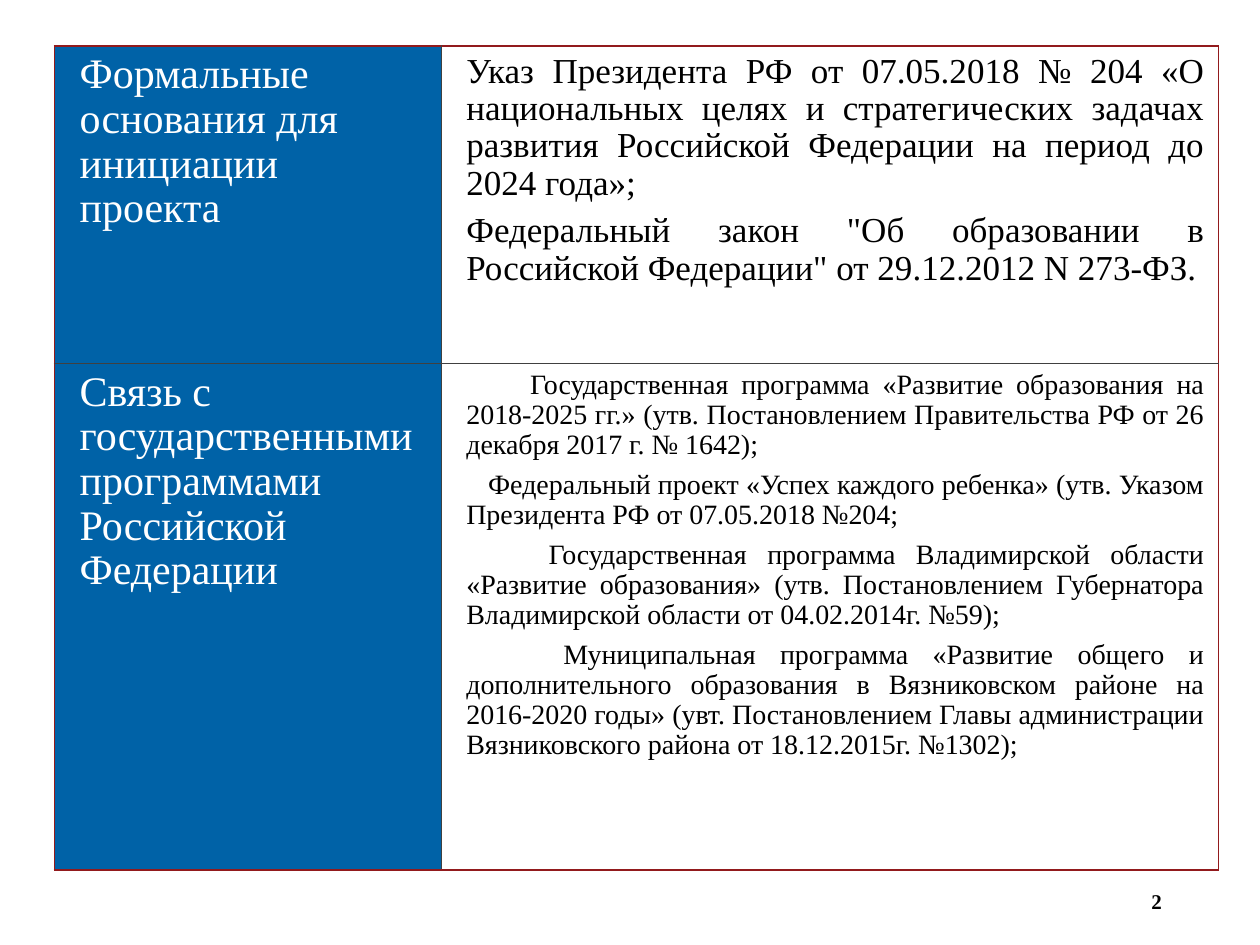
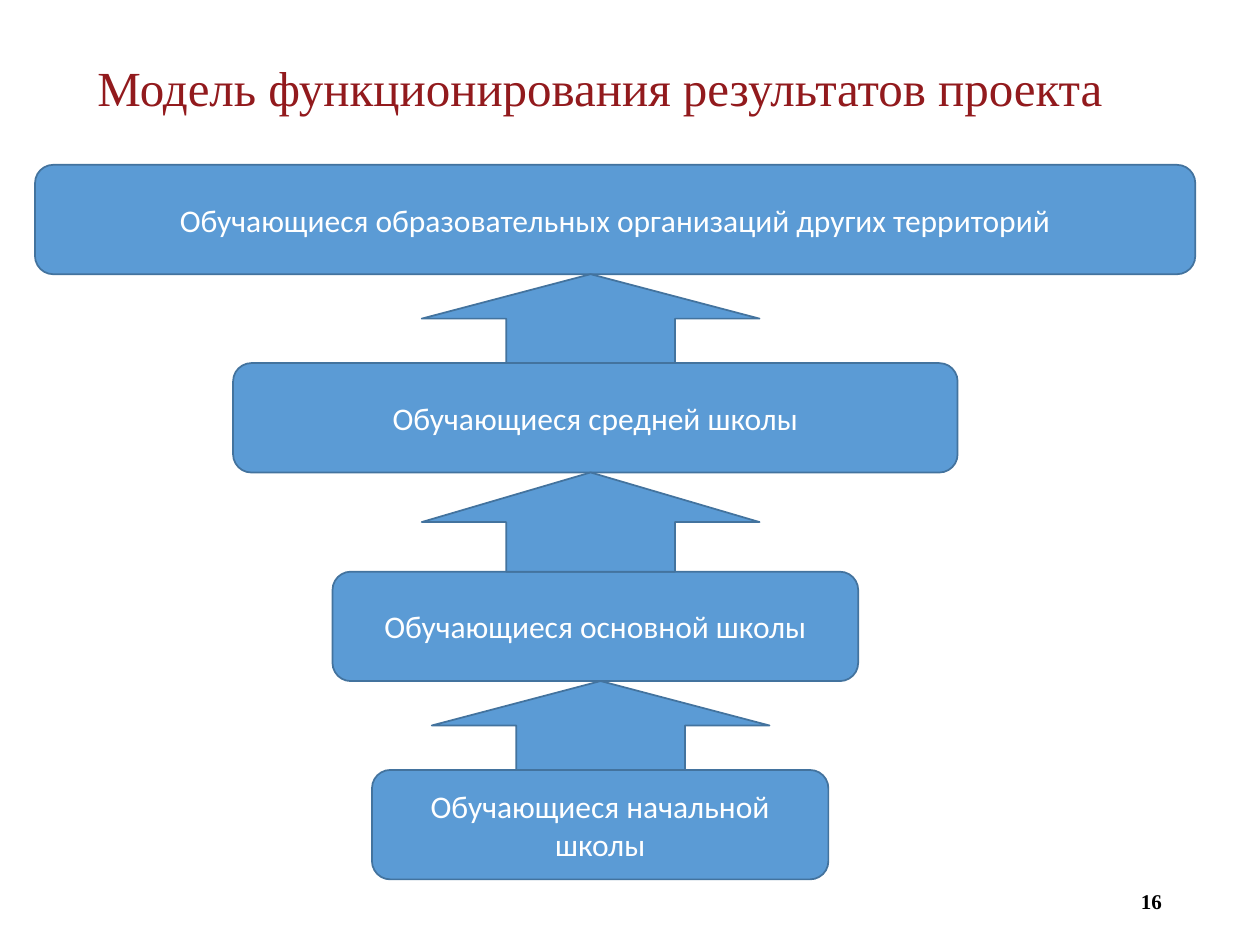
from dataclasses import dataclass
from itertools import pairwise

from lxml.etree import SubElement
from pptx import Presentation
from pptx.dml.color import RGBColor
from pptx.enum.shapes import MSO_SHAPE as Shape
from pptx.enum.text import MSO_ANCHOR as Anchor, MSO_AUTO_SIZE as AutoSize, PP_ALIGN as Align
from pptx.oxml.ns import qn
from pptx.util import Pt


@dataclass(frozen=True)
class Theme:
    serif: str = "Times New Roman"
    sans: str = "Calibri"
    red: str = "921A1D"
    header_blue: str = "0062A7"
    step_blue: str = "5B9BD5"
    step_line: str = "43739E"
    inner_line: str = "404040"
    white: str = "FFFFFF"
    black: str = "000000"
    title_size: float = 28
    header_size: float = 24
    step_size: float = 18
    number_size: float = 12


THEME = Theme()
TITLE_ONLY, BLANK = 5, 6

# Each row: height, heading, body type size, paragraphs as (first-line indent, text)
BASIS_ROWS = [
    (181.3, "Формальные основания для инициации проекта", 20, [
        (0, "Указ Президента РФ от 07.05.2018 № 204 «О национальных целях и стратегических "
            "задачах развития Российской Федерации на период до 2024 года»;"),
        (0, "Федеральный закон \"Об образовании в Российской Федерации\" "
            "от 29.12.2012 N 273-ФЗ."),
    ]),
    (289.7, "Связь с государственными программами Российской Федерации", 16, [
        (36.5, "Государственная программа «Развитие образования на 2018-2025 гг.» "
               "(утв. Постановлением Правительства РФ от 26 декабря 2017 г. № 1642);"),
        (12.5, "Федеральный проект «Успех каждого ребенка» "
               "(утв. Указом Президента РФ от 07.05.2018 №204;"),
        (47, "Государственная программа Владимирской области «Развитие образования» "
             "(утв. Постановлением Губернатора Владимирской области от 04.02.2014г. №59);"),
        (55.5, "Муниципальная программа «Развитие общего и дополнительного образования "
               "в Вязниковском районе на 2016-2020 годы» (увт. Постановлением Главы "
               "администрации Вязниковского района от 18.12.2015г. №1302);"),
    ]),
]

# Each step, from the top: left, top, width, text
STEP_HEIGHT = 62.5
STEPS = [
    (20, 94.2, 663, "Обучающиеся образовательных организаций других территорий"),
    (133.2, 207.5, 414, "Обучающиеся средней школы"),
    (190, 326.7, 300.4, "Обучающиеся основной школы"),
    (212.6, 440, 260.8, "Обучающиеся начальной школы"),
]
ARROW_WIDTH = 193
ARROW_LEFTS = [241, 241, 246.7]


def rgb(value):
    return RGBColor.from_string(value)


def style(paragraph, font_name, size, color, align=Align.LEFT, bold=False):
    font = paragraph.font
    font.name, font.size, font.bold = font_name, Pt(size), bold
    font.color.rgb = rgb(color)
    paragraph.alignment = align


def indent(paragraph, left, first=0):
    properties = paragraph._p.get_or_add_pPr()
    properties.set("marL", str(Pt(left)))
    properties.set("indent", str(Pt(first)))


def add_page_number(slide, number):
    box = slide.shapes.add_textbox(Pt(509), Pt(500.4), Pt(162), Pt(28.8))
    frame = box.text_frame
    frame.word_wrap = True
    frame.vertical_anchor = Anchor.MIDDLE
    frame.text = str(number)
    style(frame.paragraphs[0], THEME.serif, THEME.number_size, THEME.black, Align.RIGHT, True)


def set_title(slide, text):
    title = slide.shapes.title
    title.left, title.top, title.width, title.height = Pt(29.5), Pt(31.7), Pt(661), Pt(38.9)
    frame = title.text_frame
    frame.text = text
    frame.auto_size = AutoSize.NONE
    frame.vertical_anchor = Anchor.BOTTOM
    paragraph = frame.paragraphs[0]
    style(paragraph, THEME.serif, THEME.title_size, THEME.red)
    paragraph.line_spacing = 0.9
    indent(paragraph, 0, 19)


def set_borders(cell, borders):
    """Draw cell sides given as (tag, colour, width), in schema order before the fill."""
    properties = cell._tc.get_or_add_tcPr()
    for position, (tag, color, width) in enumerate(borders):
        line = SubElement(properties, qn(f"a:{tag}"), w=str(Pt(width)))
        fill = SubElement(line, qn("a:solidFill"))
        SubElement(fill, qn("a:srgbClr"), val=color)
        properties.insert(position, line)


def fill_cell(cell, items, size, color, background, align):
    cell.fill.solid()
    cell.fill.fore_color.rgb = rgb(background)
    cell.margin_left = cell.margin_right = Pt(8)
    cell.margin_top = cell.margin_bottom = Pt(4.3)
    frame = cell.text_frame
    frame.text = "\n".join(text for _, text in items)
    for paragraph, (first, _) in zip(frame.paragraphs, items):
        style(paragraph, THEME.serif, size, color, align)
        paragraph.space_before = Pt(6)
        paragraph.line_spacing = 0.96
        indent(paragraph, 6.5, first)


def add_basis_table(slide, rows, widths):
    heights = [row[0] for row in rows]
    table = slide.shapes.add_table(len(rows), len(widths), Pt(31), Pt(26.2),
                                   Pt(sum(widths)), Pt(sum(heights))).table
    table.first_row = table.horz_banding = False
    for column, width in zip(table.columns, widths):
        column.width = Pt(width)
    outer, inner = (THEME.red, 1), (THEME.inner_line, 0.5)
    last_row, last_column = len(rows) - 1, len(widths) - 1
    for index, (height, heading, size, items) in enumerate(rows):
        table.rows[index].height = Pt(height)
        fill_cell(table.cell(index, 0), [(0, heading)], THEME.header_size,
                  THEME.white, THEME.header_blue, Align.LEFT)
        fill_cell(table.cell(index, 1), items, size,
                  THEME.black, THEME.white, Align.JUSTIFY)
        for column in range(len(widths)):
            set_borders(table.cell(index, column), [
                ("lnL", *(outer if column == 0 else inner)),
                ("lnR", *(outer if column == last_column else inner)),
                ("lnT", *(outer if index == 0 else inner)),
                ("lnB", *(outer if index == last_row else inner)),
            ])


def add_block(slide, kind, left, top, width, height, text=""):
    shape = slide.shapes.add_shape(kind, Pt(left), Pt(top), Pt(width), Pt(height))
    shape.shadow.inherit = False
    shape.fill.solid()
    shape.fill.fore_color.rgb = rgb(THEME.step_blue)
    shape.line.color.rgb = rgb(THEME.step_line)
    shape.line.width = Pt(1)
    if text:
        frame = shape.text_frame
        frame.text = text
        frame.word_wrap = True
        frame.vertical_anchor = Anchor.MIDDLE
        style(frame.paragraphs[0], THEME.sans, THEME.step_size, THEME.white, Align.CENTER)


def add_step_model(slide):
    """Stack the steps and fill each gap between them with an upward arrow."""
    for left, top, width, text in STEPS:
        add_block(slide, Shape.ROUNDED_RECTANGLE, left, top, width, STEP_HEIGHT, text)
    for left, (upper, lower) in zip(ARROW_LEFTS, pairwise(STEPS)):
        top = upper[1] + STEP_HEIGHT
        add_block(slide, Shape.UP_ARROW, left, top, ARROW_WIDTH, lower[1] - top)


def main():
    presentation = Presentation()
    presentation.slide_width, presentation.slide_height = Pt(720), Pt(540)
    layouts = presentation.slide_layouts

    basis_slide = presentation.slides.add_slide(layouts[BLANK])
    add_page_number(basis_slide, 2)
    add_basis_table(basis_slide, BASIS_ROWS, [221, 444.2])

    model_slide = presentation.slides.add_slide(layouts[TITLE_ONLY])
    add_page_number(model_slide, 16)
    set_title(model_slide, "Модель функционирования результатов проекта")
    add_step_model(model_slide)

    presentation.save("out.pptx")


if __name__ == "__main__":
    main()
